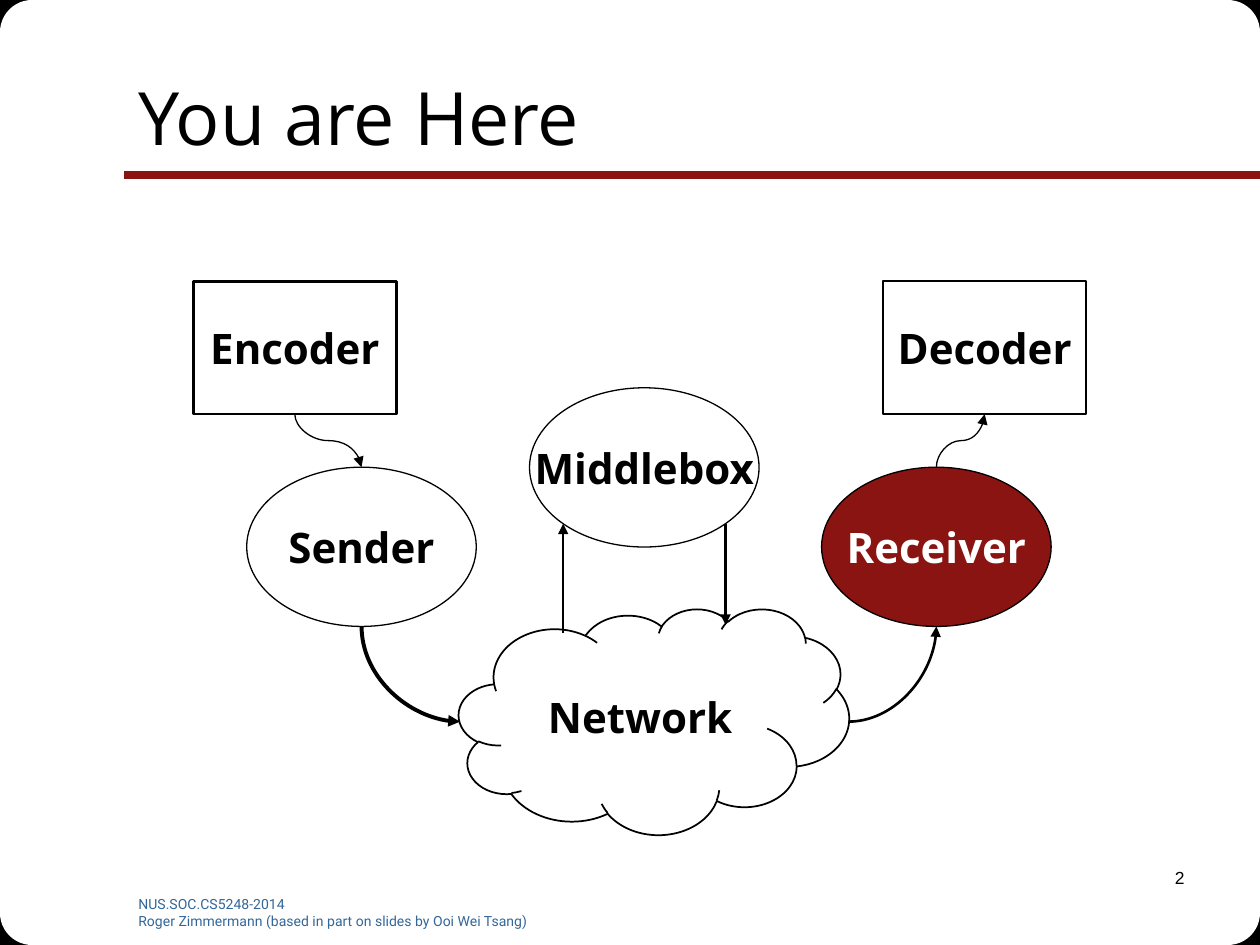
from dataclasses import dataclass
from itertools import product

from lxml.etree import SubElement
from pptx import Presentation
from pptx.dml.color import RGBColor as Color
from pptx.enum.shapes import MSO_CONNECTOR as Link, MSO_SHAPE as Preset
from pptx.enum.text import MSO_ANCHOR as Anchor, PP_ALIGN as Align
from pptx.oxml.ns import qn
from pptx.util import Pt


@dataclass(frozen=True)
class Theme:
    black: Color = Color(0, 0, 0)
    white: Color = Color(255, 255, 255)
    accent: Color = Color(0x89, 0x14, 0x11)
    credit: Color = Color(0x33, 0x66, 0x99)
    title_size: int = 42
    label_size: int = 24
    number_size: int = 10
    credit_size: int = 8
    heading_font: str = "Open Sans"
    credit_font: str = "Roboto"
    number_font: str = "Arial"


def apply_format(target, values):
    for name, value in values.items():
        setattr(target, name, value)


class SlideBuilder:
    def __init__(self, page, theme):
        self.page = page
        self.theme = theme

    def fill_text(self, frame, lines, font, color, align=Align.LEFT):
        for index, line in enumerate(lines):
            para = frame.add_paragraph() if index else frame.paragraphs[0]
            para.alignment = align
            span = para.add_run()
            span.text = line
            apply_format(span.font, font)
            span.font.color.rgb = color

    def text(self, bounds, lines, font, color, align=Align.LEFT, anchor=Anchor.TOP):
        box = self.page.shapes.add_textbox(*map(Pt, bounds))
        apply_format(box.text_frame, {"word_wrap": True, "vertical_anchor": anchor})
        self.fill_text(box.text_frame, lines, font, color, align)

    def shape(self, preset, bounds, fill, weight=0):
        shape = self.page.shapes.add_shape(preset, *map(Pt, bounds))
        shape.shadow.inherit = False
        shape.fill.solid()
        shape.fill.fore_color.rgb = fill
        if weight:
            shape.line.color.rgb = self.theme.black
            shape.line.width = Pt(weight)
        else:
            shape.line.fill.background()
        return shape

    def node(self, preset, bounds, label, weight, fill=None, color=None, wrap=False):
        theme = self.theme
        shape = self.shape(preset, bounds, fill or theme.white, weight)
        apply_format(shape.text_frame, {"word_wrap": wrap, "vertical_anchor": Anchor.MIDDLE})
        font = {"name": theme.heading_font, "size": Pt(theme.label_size), "bold": True}
        self.fill_text(shape.text_frame, [label], font, color or theme.black, Align.CENTER)

    def line(self, start, end, weight, color=None, kind=Link.STRAIGHT, arrow=False):
        connector = self.page.shapes.add_connector(kind, *map(Pt, start + end))
        connector.line.color.rgb = color or self.theme.black
        connector.line.width = Pt(weight)
        properties = connector._element.spPr
        if arrow:
            SubElement(properties.find(qn("a:ln")), qn("a:tailEnd"), type="triangle")
        SubElement(properties, qn("a:effectLst"))
        return connector

    def curve(self, start, end, weight, preset, upright=True):
        if upright:
            (x1, y1), (x2, y2) = start, end
            middle_x, middle_y = (x1 + x2) / 2, (y1 + y2) / 2
            half_x, half_y = (x2 - x1) / 2, (y2 - y1) / 2
            start = (middle_x + half_y, middle_y - half_x)
            end = (middle_x - half_y, middle_y + half_x)
        connector = self.line(start, end, weight, kind=Link.CURVE, arrow=True)
        properties = connector._element.spPr
        properties.find(qn("a:prstGeom")).set("prst", preset)
        if upright:
            properties.find(qn("a:xfrm")).set("rot", str(270 * 60000))


def draw_frame(builder, width, height):
    theme = builder.theme
    for preset, size, fill, weight in (
        (Preset.RECTANGLE, 31.3, theme.black, 0.75),
        (Preset.ROUNDED_RECTANGLE, 110, theme.white, 0),
    ):
        for left, top in product((0, width - size), (0, height - size)):
            builder.shape(preset, (left, top, size, size), fill, weight)
    builder.line((width, 100), (70.6, 100), 4.5, theme.accent)
    builder.text(
        (72, 508.3, 246, 20),
        ["NUS.SOC.CS5248-2014", "Roger Zimmermann (based in part on slides by Ooi Wei Tsang)"],
        {"name": theme.credit_font, "size": Pt(theme.credit_size)}, theme.credit,
    )
    builder.text(
        (534, 492, 150, 36), ["2"],
        {"name": theme.number_font, "size": Pt(theme.number_size)}, theme.black, Align.RIGHT,
    )
    builder.text(
        (72, 21.6, 612, 90), ["You are Here"],
        {"name": theme.heading_font, "size": Pt(theme.title_size)}, theme.black,
        anchor=Anchor.MIDDLE,
    )


def draw_diagram(builder):
    theme = builder.theme
    box_size, oval_size = (116, 75.8), (131.2, 91)
    builder.node(Preset.CLOUD, (262.2, 347.8, 223, 129), "Network", 1, wrap=True)
    for label, left, weight in (("Encoder", 110.5, 1.5), ("Decoder", 504.7, 1)):
        builder.node(Preset.RECTANGLE, (left, 160.8, *box_size), label, weight)
    for label, left, top, fill, color in (
        ("Sender", 141, 267, theme.white, theme.black),
        ("Middlebox", 302.6, 221.6, theme.white, theme.black),
        ("Receiver", 469.5, 267, theme.accent, theme.white),
    ):
        builder.node(Preset.OVAL, (left, top, *oval_size), label, 0.75, fill, color)

    sender_x, receiver_x, cloud_y = 206.6, 535.1, 412.4
    box_bottom, oval_top, oval_bottom = 236.6, 267, 358
    builder.curve((168.5, box_bottom), (sender_x, oval_top), 0.75, "curvedConnector3")
    builder.curve((sender_x, oval_bottom), (262.8, cloud_y), 2.25, "curvedConnector2")
    builder.line((321.8, 362), (321.8, 299.3), 1.5, arrow=True)
    builder.line((414.6, 299.3), (414.6, 357), 1.5, arrow=True)
    builder.curve((484.8, cloud_y), (receiver_x, oval_bottom), 1.5, "curvedConnector2", upright=False)
    builder.curve((receiver_x, oval_top), (562.7, box_bottom), 0.75, "curvedConnector3")


def main():
    width, height = 720, 540
    deck = Presentation()
    deck.slide_width, deck.slide_height = Pt(width), Pt(height)
    page = deck.slides.add_slide(deck.slide_layouts[6])
    builder = SlideBuilder(page, Theme())
    draw_frame(builder, width, height)
    draw_diagram(builder)
    deck.save("out.pptx")


if __name__ == "__main__":
    main()
